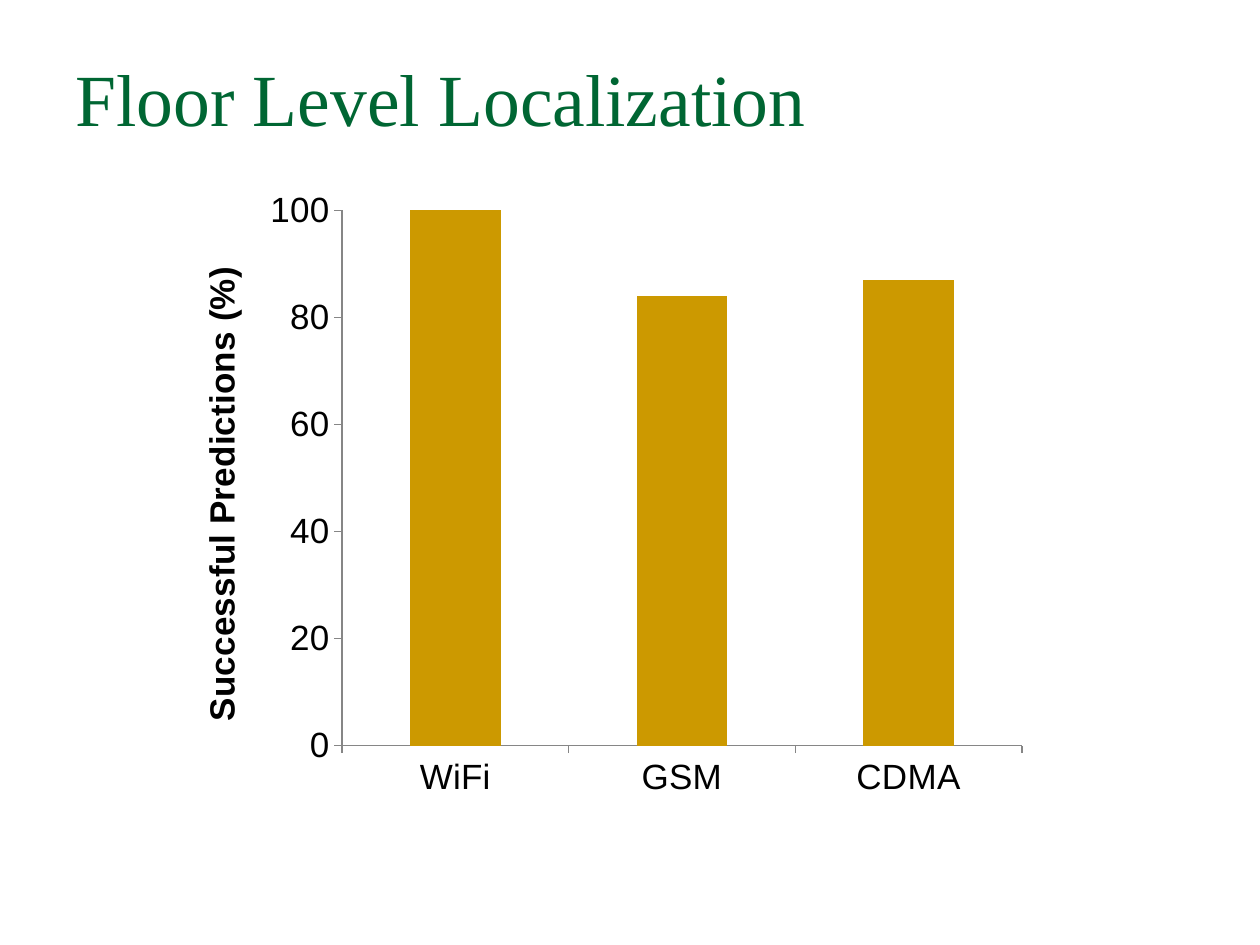
from lxml.etree import SubElement
from pptx import Presentation
from pptx.chart.data import CategoryChartData as ChartData
from pptx.dml.color import RGBColor
from pptx.enum.chart import XL_CHART_TYPE as ChartType, XL_TICK_MARK as Tick
from pptx.enum.text import MSO_ANCHOR as Anchor
from pptx.oxml.ns import qn
from pptx.util import Pt

TITLE = "Floor Level Localization"
AXIS_TITLE = "Successful Predictions (%)"
SUCCESS = {"WiFi": 100, "GSM": 84, "CDMA": 87}
TITLE_BOX = (36, 21.6, 648, 90)
CHART_BOX = (95.76, 102.24, 498.24, 360)
PLOT_AREA = {"x": 0.2, "y": 0.05, "w": 0.78, "h": 0.85}  # shares of the chart
TITLE_FONT = {"name": "Times New Roman", "size": Pt(42), "bold": False}
CHART_FONT = {"name": "Arial", "size": Pt(20), "bold": False}
GREEN, GOLD, BLACK, GRAY = "006633", "CC9900", "000000", "868686"


def color(hex_value):
    return RGBColor.from_string(hex_value)


def set_all(target, values):
    for name, value in values.items():
        setattr(target, name, value)


def style_font(font, values, hex_value):
    set_all(font, values)
    font.color.rgb = color(hex_value)


def place_plot(chart, shares):
    """Fix the inner plot area at the given shares of the chart."""
    plot_area = chart.plots[0]._element.getparent()
    layout = plot_area.find(qn("c:layout"))
    if layout is None:
        layout = SubElement(plot_area, qn("c:layout"))
        plot_area.insert(0, layout)
    manual = SubElement(layout, qn("c:manualLayout"))
    settings = {"layoutTarget": "inner", "xMode": "edge", "yMode": "edge", **shares}
    for name, value in settings.items():
        SubElement(manual, qn("c:" + name)).set("val", str(value))


def add_title(page):
    box = page.shapes.add_textbox(*map(Pt, TITLE_BOX))
    frame = box.text_frame
    set_all(frame, {"word_wrap": True, "vertical_anchor": Anchor.TOP,
                    "margin_top": Pt(8.4)})
    span = frame.paragraphs[0].add_run()
    span.text = TITLE
    style_font(span.font, TITLE_FONT, GREEN)


def add_bars(page):
    data = ChartData()
    data.categories = list(SUCCESS)
    data.add_series("Series 1", list(SUCCESS.values()))
    chart = page.shapes.add_chart(
        ChartType.COLUMN_CLUSTERED, *map(Pt, CHART_BOX), data).chart
    set_all(chart, {"has_legend": False, "has_title": False})
    style_font(chart.font, CHART_FONT, BLACK)

    plot = chart.plots[0]
    set_all(plot, {"vary_by_categories": False, "gap_width": 150})
    fill = plot.series[0].format.fill
    fill.solid()
    fill.fore_color.rgb = color(GOLD)

    for axis in (chart.category_axis, chart.value_axis):
        set_all(axis, {"has_major_gridlines": False,
                       "major_tick_mark": Tick.OUTSIDE,
                       "minor_tick_mark": Tick.NONE})
        axis.format.line.color.rgb = color(GRAY)
        axis.format.line.width = Pt(0.75)

    values = chart.value_axis
    set_all(values, {"minimum_scale": 0, "maximum_scale": 100, "major_unit": 20})
    para = values.axis_title.text_frame.paragraphs[0]
    span = para.add_run()
    span.text = AXIS_TITLE
    style_font(span.font, {**CHART_FONT, "bold": True}, BLACK)
    place_plot(chart, PLOT_AREA)


def main():
    deck = Presentation()
    set_all(deck, {"slide_width": Pt(720), "slide_height": Pt(540)})
    page = deck.slides.add_slide(deck.slide_layouts[6])
    add_title(page)
    add_bars(page)
    deck.save("out.pptx")


if __name__ == "__main__":
    main()
